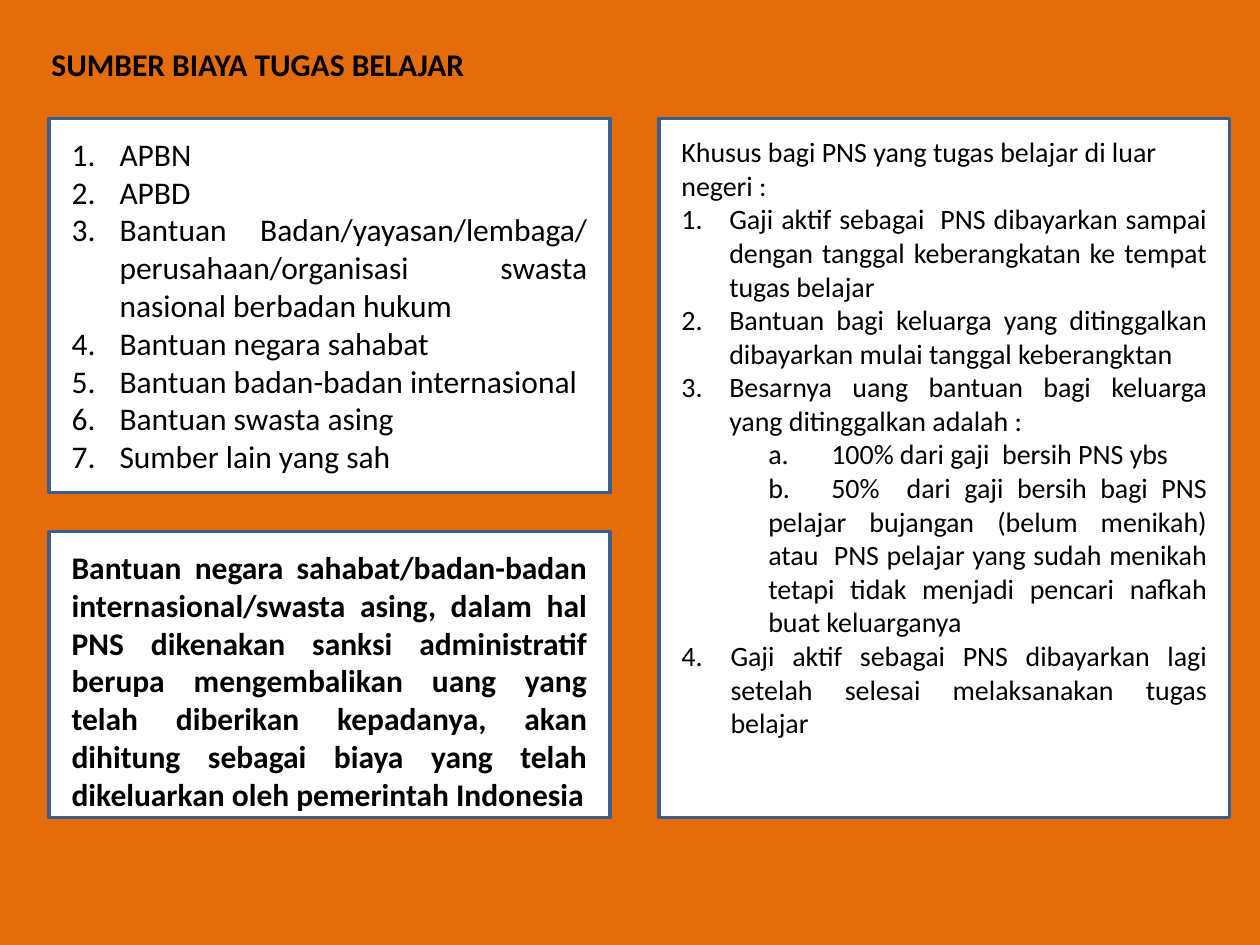
from dataclasses import dataclass

from lxml import etree
from pptx import Presentation
from pptx import util as u
from pptx.dml import color
from pptx.enum import shapes, text
from pptx.oxml import ns


@dataclass(frozen=True)
class Theme:
    background: str = "E46C0A"
    panel: str = "FFFFFF"
    border: str = "3A5F8C"
    ink: str = "000000"
    font: str = "Calibri"
    large: int = 18
    small: int = 16
    border_width: int = 2


THEME = Theme()
INSET = 0.08
HANG = 0.38

SOURCES = [
    "APBN",
    "APBD",
    "Bantuan Badan/yayasan/lembaga/ perusahaan/organisasi swasta nasional berbadan hukum",
    "Bantuan negara sahabat",
    "Bantuan badan-badan internasional",
    "Bantuan swasta asing",
    "Sumber lain yang sah",
]
SANCTION = (
    "Bantuan negara sahabat/badan-badan internasional/swasta asing, dalam hal PNS "
    "dikenakan sanksi administratif berupa mengembalikan uang yang telah diberikan "
    "kepadanya, akan dihitung sebagai biaya yang telah dikeluarkan oleh pemerintah Indonesia"
)
ABROAD_INTRO = "Khusus bagi PNS yang tugas belajar di luar negeri :"
ABROAD_RULES = [
    "Gaji aktif sebagai  PNS dibayarkan sampai dengan tanggal keberangkatan ke tempat tugas belajar",
    "Bantuan bagi keluarga yang ditinggalkan dibayarkan mulai tanggal keberangktan",
    "Besarnya uang bantuan bagi keluarga yang ditinggalkan adalah :",
]
ABROAD_RATES = [
    "\ta.\t100% dari gaji  bersih PNS ybs",
    "\tb.\t50%  dari gaji bersih bagi PNS pelajar bujangan (belum menikah) atau  PNS "
    "pelajar yang sudah menikah tetapi tidak menjadi pencari nafkah buat keluarganya",
]
ABROAD_RETURN = "4.\tGaji aktif sebagai PNS dibayarkan lagi setelah selesai melaksanakan tugas belajar"


def rgb(value):
    return color.RGBColor.from_string(value)


def add_text(frame, content, size=THEME.large, bold=False, justify=False,
             hang=0, numbered=False, tabs=()):
    first = frame.paragraphs[0]
    para = frame.add_paragraph() if first.runs else first
    para.alignment = text.PP_ALIGN.JUSTIFY if justify else text.PP_ALIGN.LEFT
    span = para.add_run()
    span.text = content
    span.font.name = THEME.font
    span.font.size = u.Pt(size)
    span.font.bold = bold
    span.font.color.rgb = rgb(THEME.ink)
    properties = para._p.get_or_add_pPr()
    properties.set("marL", str(u.Inches(hang)))
    properties.set("indent", str(-u.Inches(hang)))
    if numbered:
        etree.SubElement(properties, ns.qn("a:buAutoNum"), type="arabicPeriod")
    else:
        etree.SubElement(properties, ns.qn("a:buNone"))
    if tabs:
        stops = etree.SubElement(properties, ns.qn("a:tabLst"))
        for stop in tabs:
            etree.SubElement(stops, ns.qn("a:tab"), pos=str(u.Inches(stop)), algn="l")


def add_frame(page, left, top, width, height):
    box = page.shapes.add_textbox(*map(u.Inches, (left, top, width, height)))
    box.text_frame.word_wrap = True
    return box.text_frame


def add_panel(page, left, top, width, height):
    panel = page.shapes.add_shape(
        shapes.MSO_SHAPE.RECTANGLE, *map(u.Inches, (left, top, width, height)))
    panel.shadow.inherit = False
    panel.fill.solid()
    panel.fill.fore_color.rgb = rgb(THEME.panel)
    panel.line.color.rgb = rgb(THEME.border)
    panel.line.width = u.Pt(THEME.border_width)
    return add_frame(page, left + INSET, top + INSET, width - 2 * INSET, height - 2 * INSET)


def add_title(page, left, top, width, height):
    add_text(add_frame(page, left, top, width, height), "SUMBER BIAYA TUGAS BELAJAR", bold=True)


def add_sources(page, left, top, width, height):
    frame = add_panel(page, left, top, width, height)
    for source in SOURCES:
        add_text(frame, source, justify=True, hang=HANG, numbered=True)


def add_abroad(page, left, top, width, height):
    frame = add_panel(page, left, top, width, height)
    add_text(frame, ABROAD_INTRO, size=THEME.small)
    for rule in ABROAD_RULES:
        add_text(frame, rule, size=THEME.small, justify=True, hang=HANG,
                 numbered=True, tabs=(0.29,))
    for rate in ABROAD_RATES:
        add_text(frame, rate, size=THEME.small, justify=True, hang=0.69, tabs=(0.39, 0.69))
    add_text(frame, ABROAD_RETURN, size=THEME.small, justify=True, hang=0.39, tabs=(0.39,))


def add_sanction(page, left, top, width, height):
    add_text(add_panel(page, left, top, width, height), SANCTION, bold=True, justify=True)


def main():
    deck = Presentation()
    deck.slide_width, deck.slide_height = u.Inches(10), u.Inches(7.5)
    page = deck.slides.add_slide(deck.slide_layouts[6])
    page.background.fill.solid()
    page.background.fill.fore_color.rgb = rgb(THEME.background)
    add_title(page, 0.31, 0.31, 9.38, 0.4)
    add_sources(page, 0.39, 0.94, 4.45, 2.97)
    add_abroad(page, 5.23, 0.94, 4.53, 5.55)
    add_sanction(page, 0.39, 4.22, 4.45, 2.27)
    deck.save("out.pptx")


if __name__ == "__main__":
    main()
